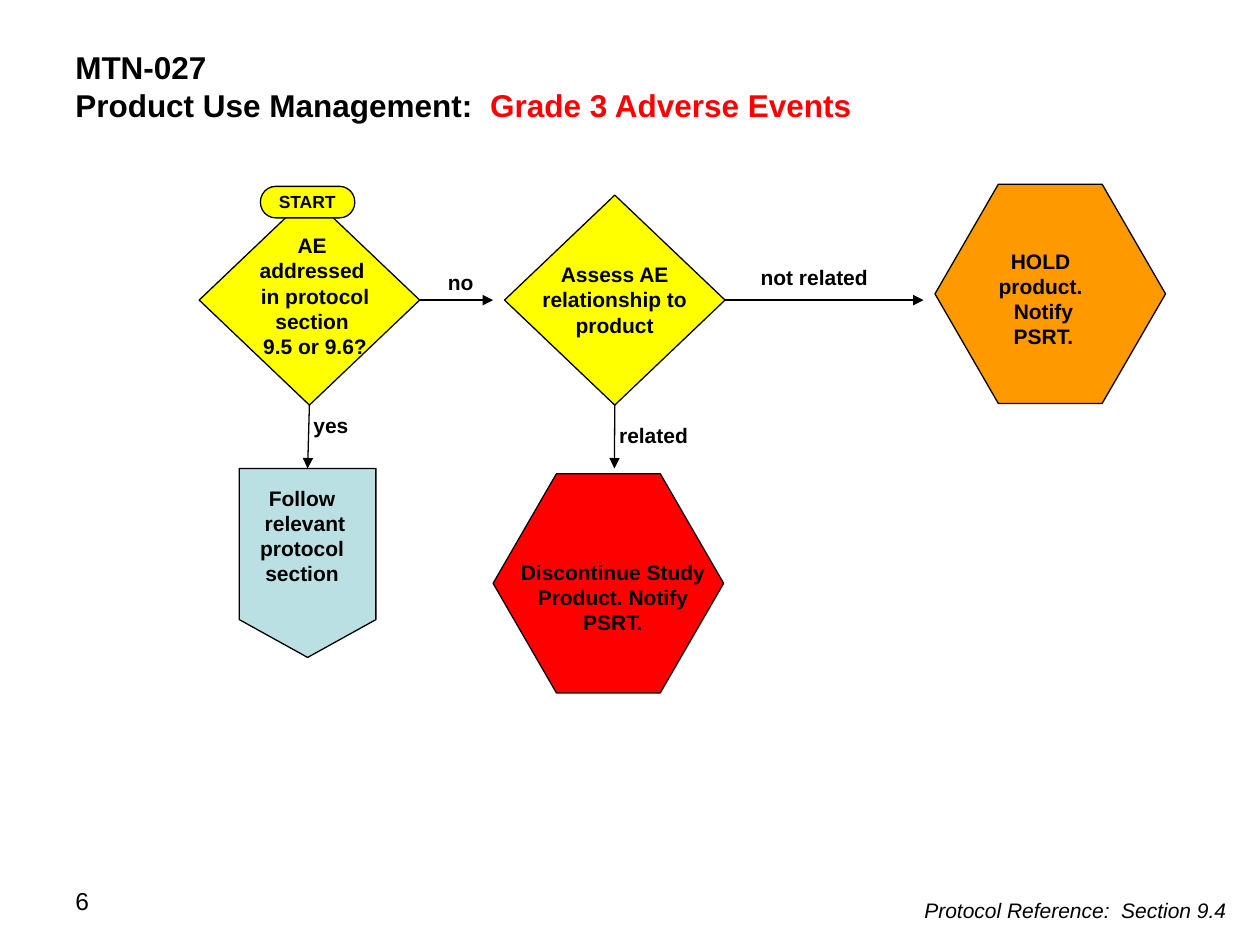
import pptx
import pptx.util
import pptx.dml.color
import pptx.enum.shapes
import pptx.enum.text
import pptx.oxml.ns
import lxml.etree

Pt = pptx.util.Pt
RGB = pptx.dml.color.RGBColor
SHAPE = pptx.enum.shapes.MSO_SHAPE
ALIGN = pptx.enum.text.PP_ALIGN

BLACK = RGB(0, 0, 0)
RED = RGB(255, 0, 0)
YELLOW = RGB(255, 255, 0)
ORANGE = RGB(255, 153, 0)
PALE_BLUE = RGB(187, 224, 227)

TOP, LEFT, BOTTOM, RIGHT = range(4)
DIAMOND_SIZE = (126, 120)
HEXAGON_SIZE = (131.75, 125.3)


def add_text(s, box, lines, size=12, bold=True, italic=False, align=ALIGN.CENTER, inset=7.2):
    """Add a wrapped text box with one paragraph per line and return its frame."""
    tf = s.shapes.add_textbox(*map(Pt, box)).text_frame
    tf.word_wrap = True
    tf.margin_left = Pt(inset)
    tf.text = "\n".join(lines)
    for p in tf.paragraphs:
        p.alignment = align
        for r in p.runs:
            r.font.name = "Arial"
            r.font.size = Pt(size)
            r.font.bold = bold
            r.font.italic = italic
            r.font.color.rgb = BLACK
    return tf


def add_node(s, kind, box, fill, label_box, lines, size=12):
    """Add a filled outline with a label placed relative to its top left corner."""
    x, y, w, h = box
    dx, dy, label_w, label_h = label_box
    sp = s.shapes.add_shape(kind, Pt(x), Pt(y), Pt(w), Pt(h))
    sp.shadow.inherit = False
    sp.fill.solid()
    sp.fill.fore_color.rgb = fill
    sp.line.color.rgb = BLACK
    sp.line.width = Pt(0.75)
    if kind == SHAPE.HEXAGON:
        sp.adjustments[0] = 0.289
    add_text(s, (x + dx, y + dy, label_w, label_h), lines, size)
    return sp


def add_arrow(s, source, side, end, label, label_box, align=ALIGN.CENTER, inset=0, target=None):
    """Add a labelled arrow from a side of one node to a point or the top of another."""
    x, y = map(Pt, end)
    line = s.shapes.add_connector(pptx.enum.shapes.MSO_CONNECTOR.STRAIGHT, x, y, x, y)
    line.begin_connect(source, side)
    if target is not None:
        line.end_connect(target, TOP)
    line.line.color.rgb = BLACK
    line.line.width = Pt(0.75)
    qn = pptx.oxml.ns.qn
    lxml.etree.SubElement(line.line._get_or_add_ln(), qn("a:tailEnd"), type="triangle")
    lxml.etree.SubElement(line._element.spPr, qn("a:effectLst"))
    return add_text(s, label_box, [label], align=align, inset=inset)


def add_title(s, box):
    """Add the two-line heading with its topic in red."""
    tf = add_text(s, box, ["MTN-027", "Product Use Management:  "], 18, align=ALIGN.LEFT)
    r = tf.paragraphs[1].add_run()
    r.text = "Grade 3 Adverse Events"
    r.font.name = "Arial"
    r.font.size = Pt(18)
    r.font.bold = True
    r.font.color.rgb = RED


def add_flowchart(s, box):
    """Add the decision nodes, the outcomes and the arrows between them."""
    x, y = box[:2]
    addressed = add_node(s, SHAPE.DIAMOND, (x, y + 5, *DIAMOND_SIZE), YELLOW,
                         (12.25, 18, 108, 80),
                         ["AE ", "addressed ", "in protocol section ", "9.5 or 9.6?"])
    assess = add_node(s, SHAPE.DIAMOND, (x + 174.5, y + 5, *DIAMOND_SIZE), YELLOW,
                      (9, 34.5, 108, 50.5), ["Assess AE relationship to product"])
    follow = add_node(s, SHAPE.FLOWCHART_OFFPAGE_CONNECTOR, (x + 23, y + 161.2, 78, 108),
                      PALE_BLUE, (-16.5, 6, 108, 65.5),
                      ["Follow ", "relevant protocol ", "section "])
    add_node(s, SHAPE.HEXAGON, (x + 168, y + 164.2, *HEXAGON_SIZE), RED,
             (6.5, 45.4, 124, 51), ["Discontinue Study Product. Notify PSRT."])
    add_node(s, SHAPE.HEXAGON, (x + 420.5, y - 1.2, *HEXAGON_SIZE), ORANGE,
             (0, 33, 124, 65.5), ["HOLD ", "product. ", "Notify", "PSRT."])
    add_node(s, SHAPE.FLOWCHART_TERMINATOR, (x + 35, y, 54, 18), YELLOW,
             (3, -0.9, 47.5, 19.5), ["START"], 10)

    mid = y + 65
    add_arrow(s, addressed, RIGHT, (x + 168, mid), "no", (x + 126, y + 44, 54, 21.6))
    tf = add_arrow(s, assess, RIGHT, (x + 414, mid), "not related",
                   (x + 294.5, y + 41, 114, 21.6), inset=7.2)
    tf.paragraphs[0].space_after = Pt(1.8)
    add_arrow(s, addressed, BOTTOM, (x + 62, y + 161.2), "yes",
              (x + 65.3, y + 125.5, 42, 21.6), ALIGN.LEFT, target=follow)
    add_arrow(s, assess, BOTTOM, (x + 237.3, y + 161.2), "related",
              (x + 240, y + 131.5, 48, 21.6), ALIGN.LEFT)


def add_footer(s, box):
    """Add the page number at the left and the protocol reference at the right."""
    x, y, w, h = box
    add_text(s, (x, y, 168, h), ["6"], 14, bold=False, align=ALIGN.LEFT)
    tf = add_text(s, (x + w - 270, y + 7, 270, 21.6), ["Protocol Reference:  Section 9.4"],
                  bold=False, italic=True, align=ALIGN.RIGHT)
    tf.paragraphs[0].space_before = Pt(6)


def main():
    """Build the slide and save it."""
    prs = pptx.Presentation()
    prs.slide_width, prs.slide_height = Pt(720), Pt(540)
    s = prs.slides.add_slide(prs.slide_layouts[6])
    add_title(s, (36, 24, 648, 51))
    add_flowchart(s, (113.8, 106.5, 553, 290))
    add_footer(s, (36, 502.5, 672, 37.5))
    prs.save("out.pptx")


if __name__ == "__main__":
    main()
